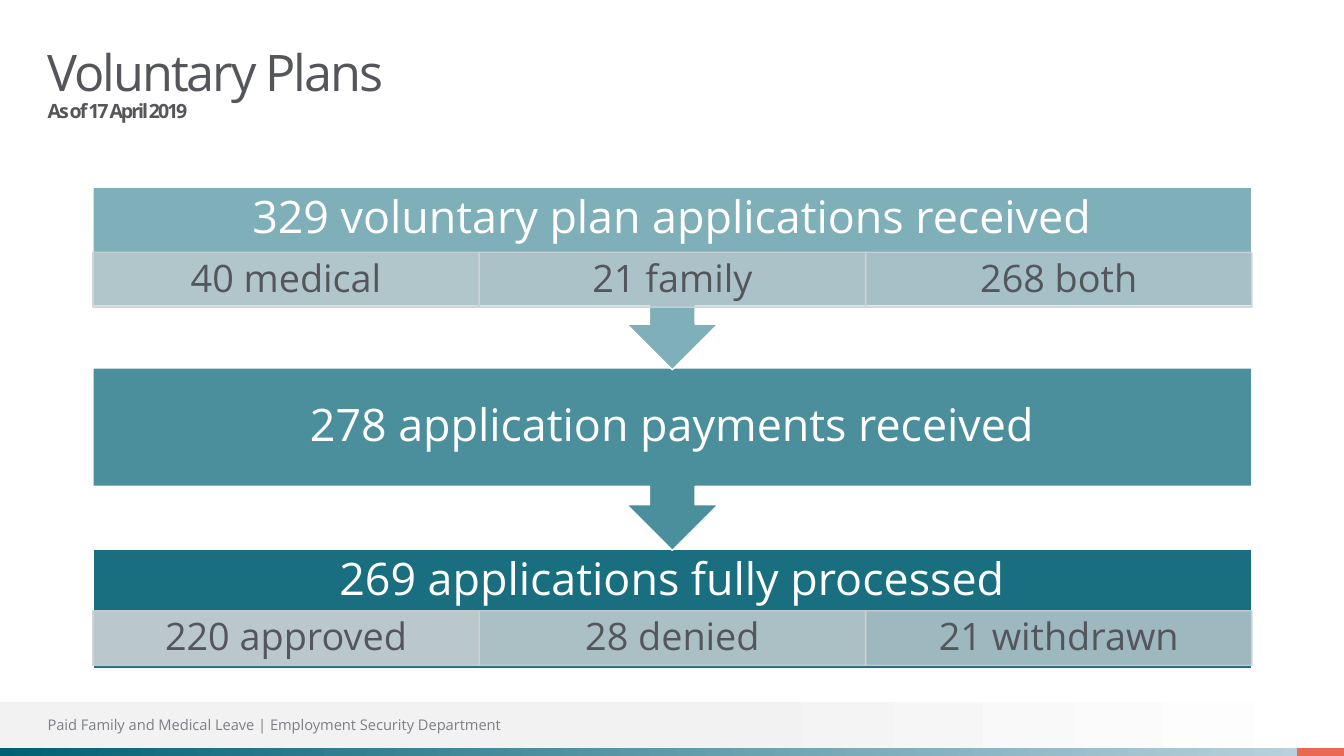
import pptx
import pptx.dml.color
import pptx.enum.shapes
import pptx.enum.text
import pptx.oxml
import pptx.oxml.ns
import pptx.util

Cm = pptx.util.Cm
Pt = pptx.util.Pt
Shape = pptx.enum.shapes.MSO_SHAPE
Align = pptx.enum.text.PP_ALIGN
Anchor = pptx.enum.text.MSO_ANCHOR


def paint(fill, color, opacity=100, end_color=None, start=0):
    """Fill with one colour, or left to right from color (at start) to end_color."""
    rgb = pptx.dml.color.RGBColor.from_string
    if end_color:
        fill.gradient()
        fill.gradient_angle = 0
        for stop, stop_color, position in zip(fill.gradient_stops, (color, end_color), (start, 1)):
            stop.color.rgb = rgb(stop_color)
            stop.position = position
        return
    fill.solid()
    fill.fore_color.rgb = rgb(color)
    if opacity < 100:
        color_node = fill._xPr.find(".//" + pptx.oxml.ns.qn("a:srgbClr"))
        alpha = pptx.oxml.parse_xml(f"<a:alpha {pptx.oxml.ns.nsdecls('a')}/>")
        alpha.set("val", str(opacity * 1000))
        color_node.append(alpha)


def write(shape, text, size, color, bold=False, align=Align.LEFT, anchor=Anchor.MIDDLE,
          side=0, bottom=0, line_spacing=0.9, tracking=0):
    """Append a run to the first paragraph; side and bottom are insets in cm."""
    frame = shape.text_frame
    frame.word_wrap = True
    frame.vertical_anchor = anchor
    frame.margin_left = frame.margin_right = Cm(side)
    frame.margin_top, frame.margin_bottom = 0, Cm(bottom)
    paragraph = frame.paragraphs[0]
    paragraph.alignment = align
    paragraph.line_spacing = line_spacing
    run = paragraph.add_run()
    run.text = text
    run.font.name = "Open Sans"
    run.font.size = Pt(size)
    run.font.bold = bold
    paint(run.font.fill, color)
    if tracking:
        run._r.get_or_add_rPr().set("spc", str(int(tracking * 100)))


TEAL, GREY, DARK, WHITE = "006073", "CCD2D5", "54565B", "FFFFFF"
SLIDE_WIDTH, SLIDE_HEIGHT = 33.87, 19.05
MARGIN = 1.2

presentation = pptx.Presentation()
presentation.slide_width = Cm(SLIDE_WIDTH)
presentation.slide_height = Cm(SLIDE_HEIGHT)
slide = presentation.slides.add_slide(presentation.slide_layouts[6])
shapes = slide.shapes

# Footer band and the coloured strip below it
accent_left, strip_top = 32.69, 18.85
footer_parts = [
    (0, 17.68, SLIDE_WIDTH, strip_top - 17.68, dict(color="F2F2F2", end_color=WHITE, start=0.53)),
    (0, strip_top, accent_left, SLIDE_HEIGHT - strip_top, dict(color=TEAL, end_color="B8D1DC")),
    (accent_left, strip_top, SLIDE_WIDTH - accent_left, SLIDE_HEIGHT - strip_top,
     dict(color="E96952")),
]
for left, top, width, height, colors in footer_parts:
    band = shapes.add_shape(Shape.RECTANGLE, Cm(left), Cm(top), Cm(width), Cm(height))
    band.shadow.inherit = False
    band.line.fill.background()
    paint(band.fill, **colors)

title = shapes.add_textbox(Cm(MARGIN), Cm(1.2), Cm(31.5), Cm(1.2))
write(title, "Voluntary Plans", 36, DARK, anchor=Anchor.TOP, tracking=-1.5)
title.text_frame.paragraphs[0].add_line_break()
write(title, "As of 17 April 2019", 14, DARK, bold=True, anchor=Anchor.TOP, tracking=-1.5)

# Stages from last to first, so that each arrow lies over the stage it points to
STAGE_LEFT, STAGE_WIDTH = 2.34, 29.21
CELL_HEIGHT = 1.38
stages = [
    (Shape.RECTANGLE, 13.84, 3, 90, "269 applications fully processed",
     15.39, [("220 approved", 90), ("28 denied", 82), ("21 withdrawn", 74)]),
    (Shape.DOWN_ARROW_CALLOUT, 9.27, 4.6, 70, "278 application payments received", 0, []),
    (Shape.DOWN_ARROW_CALLOUT, 4.72, 4.6, 50, "329 voluntary plan applications received",
     6.36, [("40 medical", 66), ("21 family", 58), ("268 both", 50)]),
]
for kind, top, height, opacity, headline, cells_top, cells in stages:
    stage = shapes.add_shape(kind, Cm(STAGE_LEFT), Cm(top), Cm(STAGE_WIDTH), Cm(height))
    stage.shadow.inherit = False
    paint(stage.fill, TEAL, opacity)
    paint(stage.line.fill, WHITE)
    stage.line.width = Pt(1)
    write(stage, headline, 32, WHITE, align=Align.CENTER, side=0.64,
          bottom=CELL_HEIGHT if cells else 0)
    cell_width = STAGE_WIDTH / 3
    for column, (count, cell_opacity) in enumerate(cells):
        cell = shapes.add_shape(Shape.RECTANGLE, Cm(STAGE_LEFT + column * cell_width),
                                Cm(cells_top), Cm(cell_width), Cm(CELL_HEIGHT))
        cell.shadow.inherit = False
        paint(cell.fill, GREY, cell_opacity)
        paint(cell.line.fill, GREY, 90)
        cell.line.width = Pt(1)
        write(cell, count, 27, DARK, align=Align.CENTER, side=0.53)

footer = shapes.add_textbox(Cm(MARGIN), Cm(17.68), Cm(15.2), Cm(1.14))
write(footer, "Paid Family and Medical Leave | Employment Security Department",
      10.5, "7C7F86", line_spacing=1.0)

presentation.save("out.pptx")
